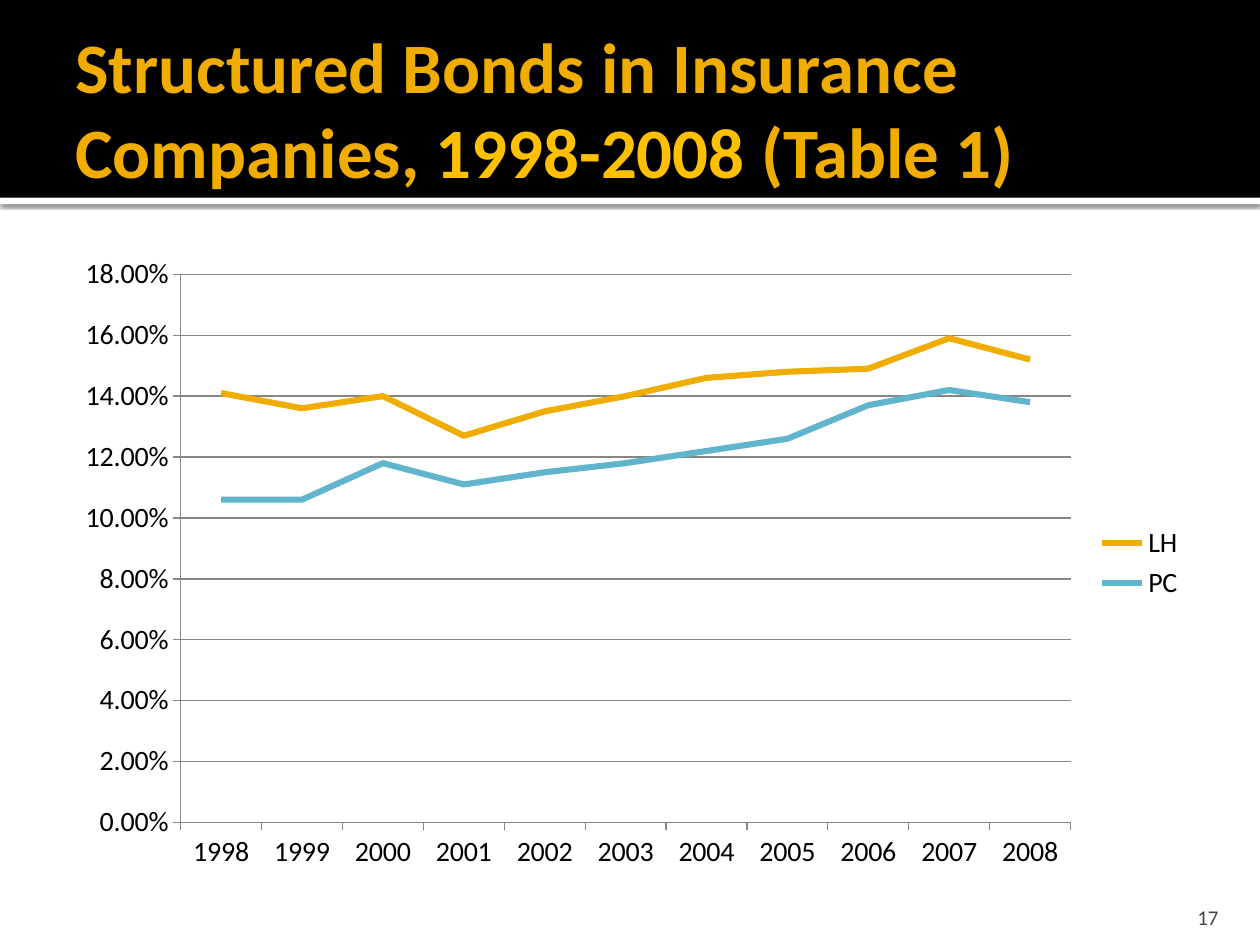
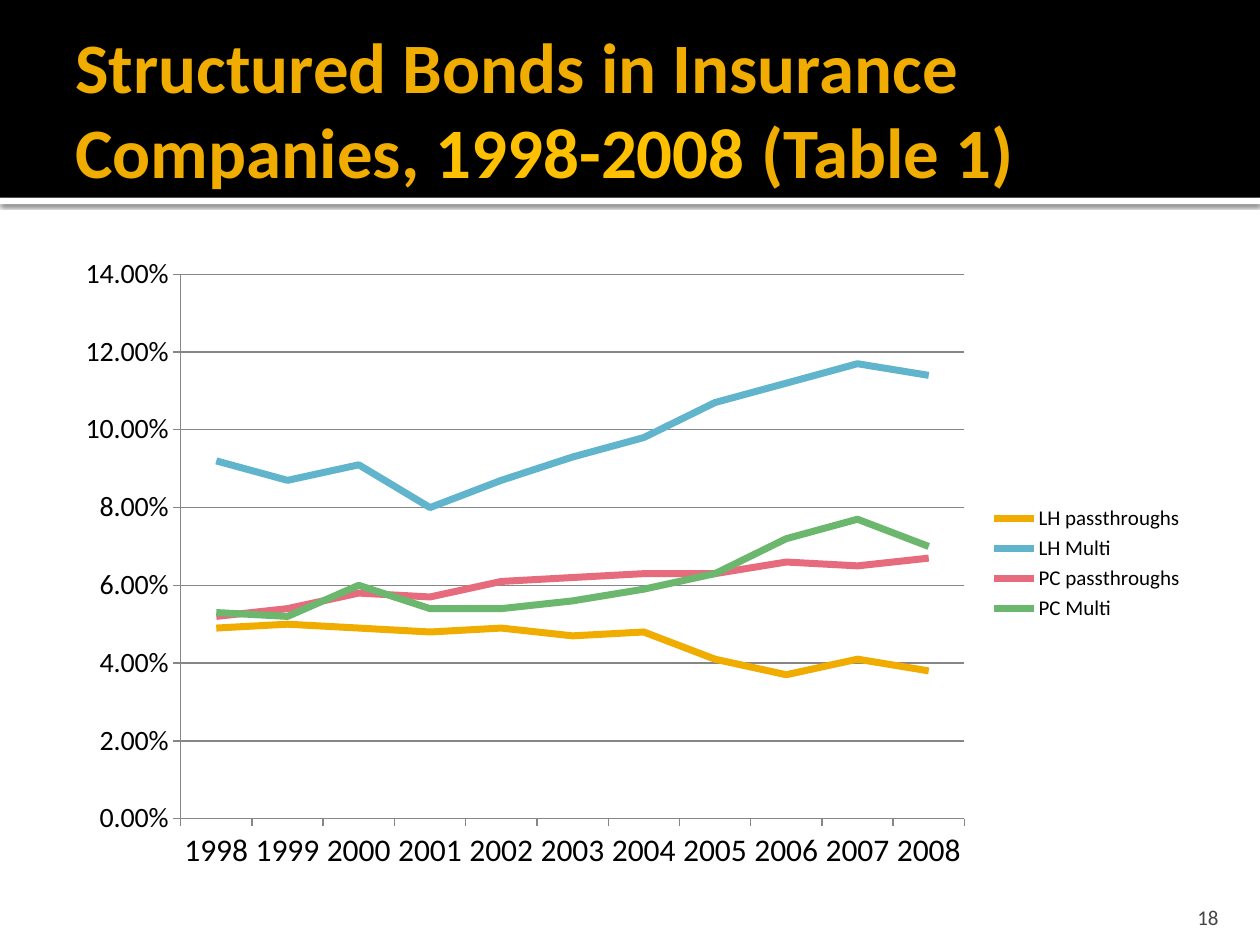
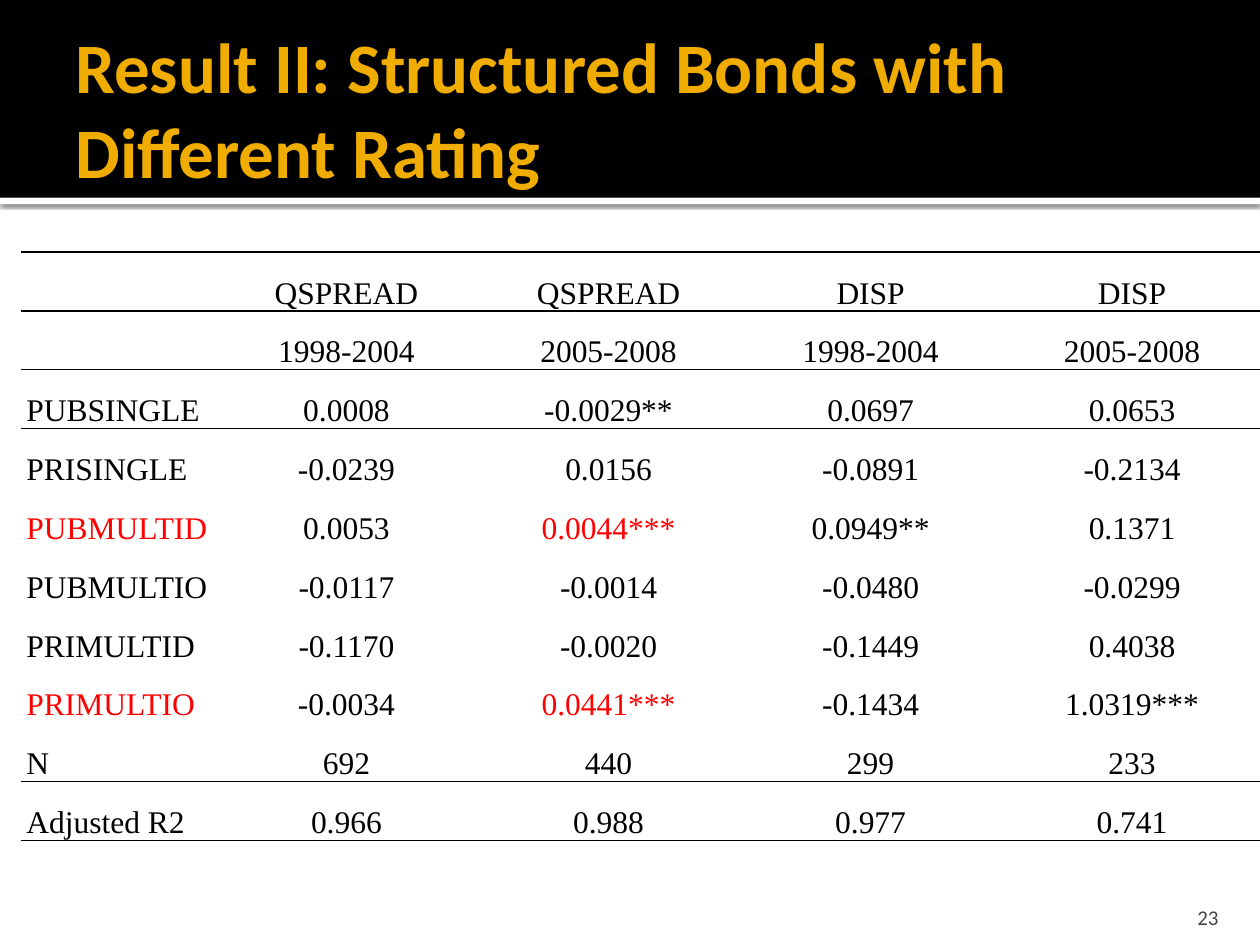
from dataclasses import dataclass

import lxml.etree
import pptx
import pptx.chart.data
import pptx.dml.color
import pptx.enum.chart
import pptx.enum.shapes
import pptx.enum.text
import pptx.oxml
import pptx.oxml.ns
import pptx.util

Inches = pptx.util.Inches
Pt = pptx.util.Pt
RGBColor = pptx.dml.color.RGBColor
ALIGN = pptx.enum.text.PP_ALIGN
ANCHOR = pptx.enum.text.MSO_ANCHOR

BLACK = RGBColor(0x00, 0x00, 0x00)
WHITE = RGBColor(0xFF, 0xFF, 0xFF)
GOLD = RGBColor(0xF0, 0xAD, 0x00)
AMBER = RGBColor(0xFF, 0xC0, 0x00)
BLUE = RGBColor(0x60, 0xB5, 0xCC)
ROSE = RGBColor(0xE6, 0x6C, 0x7D)
GREEN = RGBColor(0x6B, 0xB7, 0x6D)
RED = RGBColor(0xFF, 0x00, 0x00)
GREY = RGBColor(0x45, 0x45, 0x45)
RULE = RGBColor(0x86, 0x86, 0x86)

SANS = "Calibri"
SERIF = "Times New Roman"
NO_STYLE = "{2D5ABB26-0587-4C30-8999-92F81FD0307C}"
NS = pptx.oxml.ns.nsdecls("a")

YEARS = [str(year) for year in range(1998, 2009)]
BONDS = (
    ("Structured Bonds in Insurance Companies, ", GOLD),
    ("1998-2008", AMBER),
    (" (Table 1)", GOLD),
)
RATING = (("Result II: Structured Bonds with Different Rating", GOLD),)

ROWS = [
    ["", "QSPREAD", "QSPREAD", "DISP", "DISP"],
    ["", "1998-2004", "2005-2008", "1998-2004", "2005-2008"],
    ["PUBSINGLE", "0.0008", "-0.0029**", "0.0697", "0.0653"],
    ["PRISINGLE", "-0.0239", "0.0156", "-0.0891", "-0.2134"],
    ["PUBMULTID", "0.0053", "0.0044***", "0.0949**", "0.1371"],
    ["PUBMULTIO", "-0.0117", "-0.0014", "-0.0480", "-0.0299"],
    ["PRIMULTID", "-0.1170", "-0.0020", "-0.1449", "0.4038"],
    ["PRIMULTIO", "-0.0034", "0.0441***", "-0.1434", "1.0319***"],
    ["N", "692", "440", "299", "233"],
    ["Adjusted R2", "0.966", "0.988", "0.977", "0.741"],
]
RED_CELLS = {(4, 0), (4, 2), (7, 0), (7, 2)}
WIDTHS = (1.54, 2.08, 2.08, 2.08, 2.07)
LINES = {0, 1, 2, 9, 10}  # row edges that carry a rule, counted from the top


@dataclass
class Trend:
    name: str
    color: RGBColor
    vals: list[float]


@dataclass
class Graph:
    page: int
    trends: list[Trend]
    year_size: int
    key_size: int
    width: float


GRAPHS = [
    Graph(17, [
        Trend("LH", GOLD, [0.141, 0.136, 0.14, 0.127, 0.135, 0.14,
                           0.146, 0.148, 0.149, 0.159, 0.152]),
        Trend("PC", BLUE, [0.106, 0.106, 0.118, 0.111, 0.115, 0.118,
                           0.122, 0.126, 0.137, 0.142, 0.138]),
    ], year_size=16, key_size=16, width=3.5),
    Graph(18, [
        Trend("LH passthroughs", GOLD, [0.049, 0.05, 0.049, 0.048, 0.049, 0.047,
                                        0.048, 0.041, 0.037, 0.041, 0.038]),
        Trend("LH Multi", BLUE, [0.092, 0.087, 0.091, 0.08, 0.087, 0.093,
                                 0.098, 0.107, 0.112, 0.117, 0.114]),
        Trend("PC passthroughs", ROSE, [0.052, 0.054, 0.058, 0.057, 0.061, 0.062,
                                        0.063, 0.063, 0.066, 0.065, 0.067]),
        Trend("PC Multi", GREEN, [0.053, 0.052, 0.06, 0.054, 0.054, 0.056,
                                  0.059, 0.063, 0.072, 0.077, 0.07]),
    ], year_size=18, key_size=12, width=4),
]


def write(frame, runs, *, size: float, font: str = SANS, bold: bool = False,
          align=ALIGN.LEFT, space: float | None = None) -> None:
    """Fill the first paragraph with (text, colour) runs."""
    para = frame.paragraphs[0]
    para.alignment = align
    para.line_spacing = space
    para.font.size = Pt(size)
    for text, color in runs:
        run = para.add_run()
        run.text = text
        run.font.size = Pt(size)
        run.font.name = font
        run.font.bold = bold
        run.font.color.rgb = color


def add_box(slide, left: float, top: float, width: float, height: float,
            pads: tuple[float, float, float, float], anchor):
    """Add a wrapping text box; pads run left, top, right, bottom."""
    box = slide.shapes.add_textbox(
        Inches(left), Inches(top), Inches(width), Inches(height))
    frame = box.text_frame
    frame.word_wrap = True
    frame.vertical_anchor = anchor
    (frame.margin_left, frame.margin_top,
     frame.margin_right, frame.margin_bottom) = map(Inches, pads)
    return frame


def add_band(slide, top: float, height: float, color: RGBColor):
    band = slide.shapes.add_shape(
        pptx.enum.shapes.MSO_SHAPE.RECTANGLE,
        0, Inches(top), Inches(10), Inches(height))
    band.shadow.inherit = False
    band.fill.solid()
    band.fill.fore_color.rgb = color
    band.line.fill.background()
    return band


def cast_shade(shape) -> None:
    """Give the shape a soft shadow straight below it."""
    effects = shape._element.spPr.find(pptx.oxml.ns.qn("a:effectLst"))
    effects.append(pptx.oxml.parse_xml(
        f'<a:outerShdw {NS} blurRad="{Pt(2.5)}" dist="{Pt(0.8)}" dir="5400000" '
        'algn="tl" rotWithShape="0"><a:srgbClr val="000000">'
        '<a:alpha val="60000"/></a:srgbClr></a:outerShdw>'))


def add_page(deck, title, page: int):
    """Add a slide with its bands, title and number."""
    slide = deck.slides.add_slide(deck.slide_layouts[6])
    cast_shade(add_band(slide, 1.57, 0.05, WHITE))
    add_band(slide, 0, 1.57, BLACK)
    head = add_box(slide, 0.5, 0.17, 9, 1.37, (0.1, 0.05, 0.05, 0.05), ANCHOR.MIDDLE)
    write(head, title, size=40.5, bold=True)
    foot = add_box(slide, 8.97, 7.08, 0.8, 0.3, (0.1, 0.05, 0.1, 0), ANCHOR.BOTTOM)
    write(foot, [(str(page), GREY)], size=12, align=ALIGN.RIGHT)
    return slide


def add_graph(slide, graph: Graph) -> None:
    data = pptx.chart.data.CategoryChartData(number_format="0.00%")
    data.categories = YEARS
    for trend in graph.trends:
        data.add_series(trend.name, trend.vals)
    chart = slide.shapes.add_chart(
        pptx.enum.chart.XL_CHART_TYPE.LINE,
        Inches(0.5), Inches(1.94), Inches(9), Inches(5.06), data).chart
    chart.has_title = False
    chart.font.size = Pt(10)
    chart.font.name = SANS
    chart.font.color.rgb = BLACK

    chart.has_legend = True
    chart.legend.position = pptx.enum.chart.XL_LEGEND_POSITION.RIGHT
    chart.legend.include_in_layout = False
    chart.legend.font.size = Pt(graph.key_size)

    years, rates = chart.category_axis, chart.value_axis
    for axis, size in ((years, graph.year_size), (rates, 16)):
        axis.tick_labels.font.size = Pt(size)
        axis.major_tick_mark = pptx.enum.chart.XL_TICK_MARK.OUTSIDE
        axis.format.line.color.rgb = RULE
    rates.has_major_gridlines = True
    rates.major_gridlines.format.line.color.rgb = RULE
    rates.minimum_scale = 0
    rates.major_unit = 0.02
    rates.tick_labels.number_format = "0.00%"
    rates.tick_labels.number_format_is_linked = False

    plot = chart.plots[0]
    plot.vary_by_categories = False
    for series, trend in zip(plot.series, graph.trends):
        series.smooth = False
        series.marker.style = pptx.enum.chart.XL_MARKER_STYLE.NONE
        series.format.line.color.rgb = trend.color
        series.format.line.width = Pt(graph.width)


def rule_cell(cell, row: int) -> None:
    """Draw the cell's top and bottom rules where its row has them."""
    props = cell._tc.get_or_add_tcPr()
    for edge, tag in ((row + 1, "lnB"), (row, "lnT")):
        if edge in LINES:
            props.insert(0, pptx.oxml.parse_xml(
                f'<a:{tag} {NS} w="{Pt(1)}"><a:solidFill>'
                f'<a:srgbClr val="{BLACK}"/></a:solidFill></a:{tag}>'))


def add_grid(slide) -> None:
    table = slide.shapes.add_table(
        len(ROWS), len(WIDTHS), Inches(0.17), Inches(2),
        Inches(sum(WIDTHS)), Inches(4.67)).table
    table.first_row = table.horz_banding = False
    table._tbl.tblPr.find(pptx.oxml.ns.qn("a:tableStyleId")).text = NO_STYLE
    for col, width in zip(table.columns, WIDTHS):
        col.width = Inches(width)
    for r, texts in enumerate(ROWS):
        for c, text in enumerate(texts):
            cell = table.cell(r, c)
            cell.fill.background()
            cell.vertical_anchor = ANCHOR.BOTTOM
            cell.margin_left = cell.margin_right = Inches(0.04)
            cell.margin_top = cell.margin_bottom = 0
            color = RED if (r, c) in RED_CELLS else BLACK
            write(cell.text_frame, [(text, color)] if text else [], size=18,
                  font=SERIF, align=ALIGN.CENTER if c else ALIGN.LEFT, space=1.15)
            rule_cell(cell, r)


def main() -> None:
    deck = pptx.Presentation()
    deck.slide_width, deck.slide_height = Inches(10), Inches(7.5)
    for graph in GRAPHS:
        add_graph(add_page(deck, BONDS, graph.page), graph)
    add_grid(add_page(deck, RATING, 23))
    deck.save("out.pptx")


if __name__ == "__main__":
    main()
